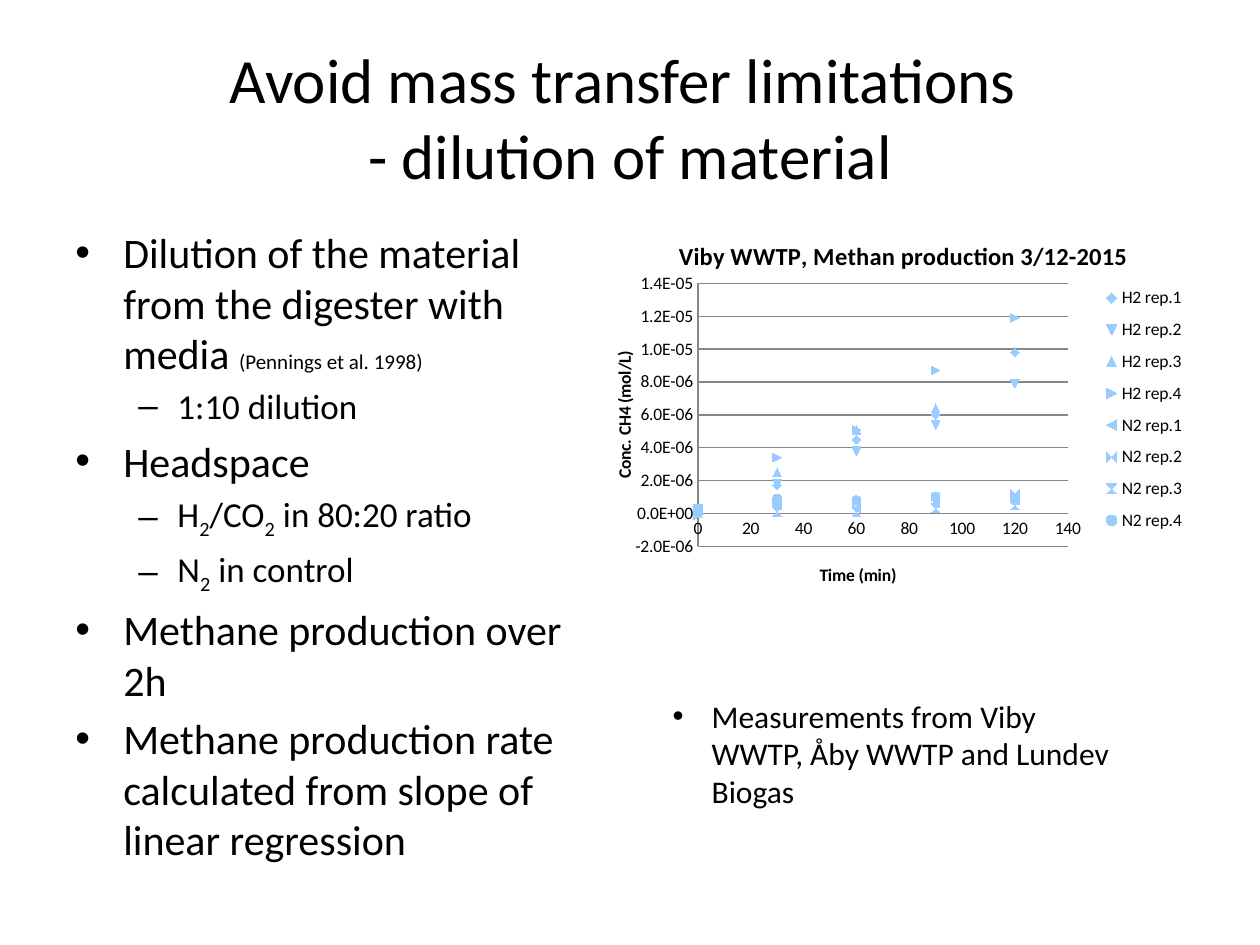
from lxml import etree
from pptx import Presentation
from pptx import util as u
from pptx.chart.data import XyChartData
from pptx.dml.color import RGBColor
from pptx.enum import chart as charts, text
from pptx.oxml import parse_xml
from pptx.oxml.ns import nsdecls, qn

FONT = "Calibri"
BLACK = RGBColor(0x00, 0x00, 0x00)
GRAY = RGBColor(0x87, 0x87, 0x87)
MARKER = RGBColor(0x99, 0xCC, 0xFF)

# Content
TITLE = "Avoid mass transfer limitations \v- dilution of material"
SUB = {"baseline": -25}
SMALL = {"size": 12}
BODY = [  # (style, runs)
    ("main", [("Dilution of the material from the digester with media ", {}),
              ("(Pennings et al. 1998)", SMALL)]),
    ("detail", [("1:10 dilution", {})]),
    ("main", [("Headspace", {})]),
    ("detail", [("H", {}), ("2", SUB), ("/CO", {}), ("2", SUB), (" in 80:20 ratio", {})]),
    ("detail", [("N", {}), ("2", SUB), (" in control", {})]),
    ("main", [("Methane production over 2h", {})]),
    ("main", [("Methane production rate calculated from slope of linear regression", {})]),
]
NOTE = [("note", [("Measurements from Viby WWTP, Åby WWTP and Lundev Biogas", {})])]
STYLES = {
    "main": {"level": 0, "size": 24, "left": 0.38, "hang": 0.38, "bullet": "•", "before": 0.2},
    "detail": {"level": 1, "size": 20, "left": 0.81, "hang": 0.31, "bullet": "–", "before": 0.2},
    "note": {"level": 0, "size": 18, "left": 0.31, "hang": 0.31, "bullet": "•", "before": 0},
}

CHART_TITLE = "Viby WWTP, Methan production 3/12-2015"
MINUTES = [0, 30, 60, 90, 120]
CONCENTRATIONS = {
    "H2 rep.1": [1e-07, 1.7e-06, 4.5e-06, 6e-06, 9.8e-06],
    "H2 rep.2": [3e-07, 1.8e-06, 3.8e-06, 5.4e-06, 7.9e-06],
    "H2 rep.3": [2e-07, 2.5e-06, 5.1e-06, 6.4e-06],
    "H2 rep.4": [-1e-07, 3.4e-06, 5.1e-06, 8.7e-06, 1.19e-05],
    "N2 rep.1": [3e-07, 5e-07, 3e-07, 6e-07, 8e-07],
    "N2 rep.2": [2e-07, 6e-07, 6e-07, 1e-06, 1.2e-06],
    "N2 rep.3": [0, 1e-07, 1e-07, 3e-07, 5e-07],
    "N2 rep.4": [2e-07, 9e-07, 8e-07, 1e-06, 8e-07],
}
AXES = {  # title, minimum, maximum, step, number format, gridlines
    "category_axis": ("Time (min)", 0, 140, 20, "General", False),
    "value_axis": ("Conc. CH4 (mol/L)", -2e-06, 1.4e-05, 2e-06, "0.0E+00", True),
}
PLOT_AREA = {"x": 0.15, "y": 0.17, "w": 0.63, "h": 0.71}
LEGEND_AREA = {"x": 0.83, "y": 0.15, "w": 0.16, "h": 0.72}


def box(*lengths):
    return [u.Inches(length) for length in lengths]


def set_font(font, size, bold=False):
    for name, value in {"name": FONT, "size": u.Pt(size), "bold": bold}.items():
        setattr(font, name, value)
    font.color.rgb = BLACK


def add_bullets(slide, place, content):
    frame = slide.shapes.add_textbox(*box(*place)).text_frame
    frame.word_wrap = True
    for index, (style_name, runs) in enumerate(content):
        style = STYLES[style_name]
        paragraph = frame.add_paragraph() if index else frame.paragraphs[0]
        paragraph.level = style["level"]
        paragraph.space_before = u.Pt(style["before"] * style["size"])
        properties = paragraph._p.get_or_add_pPr()
        properties.set("marL", str(u.Inches(style["left"])))
        properties.set("indent", str(-u.Inches(style["hang"])))
        etree.SubElement(properties, qn("a:buFont")).set("typeface", "Arial")
        etree.SubElement(properties, qn("a:buChar")).set("char", style["bullet"])
        for words, changes in runs:
            run = paragraph.add_run()
            run.text = words
            set_font(run.font, changes.get("size", style["size"]))
            if "baseline" in changes:
                run._r.get_or_add_rPr().set("baseline", str(changes["baseline"] * 1000))


def add_title_text(owner, words, size):
    frame = owner.text_frame
    frame.text = words
    set_font(frame.paragraphs[0].runs[0].font, size, bold=True)


def set_layout(element, position, area, target=""):
    for old in element.findall(qn("c:layout")):
        element.remove(old)
    sizes = "".join(f'<c:{key} val="{value}"/>' for key, value in area.items())
    element.insert(position, parse_xml(
        f'<c:layout {nsdecls("c")}><c:manualLayout>{target}'
        f'<c:xMode val="edge"/><c:yMode val="edge"/>{sizes}</c:manualLayout></c:layout>'))


def add_scatter(slide, place):
    data = XyChartData()
    for name, values in CONCENTRATIONS.items():
        series = data.add_series(name)
        for minute, value in zip(MINUTES, values):
            series.add_data_point(minute, value)
    chart = slide.shapes.add_chart(charts.XL_CHART_TYPE.XY_SCATTER, *box(*place), data).chart
    set_font(chart.font, 10)
    add_title_text(chart.chart_title, CHART_TITLE, 14)
    chart.chart_title.include_in_layout = False
    chart.has_legend = True
    chart.legend.position = charts.XL_LEGEND_POSITION.RIGHT
    chart.legend.include_in_layout = False

    # Axes
    for axis_name, (title, low, high, step, number_format, grid) in AXES.items():
        axis = getattr(chart, axis_name)
        settings = {"minimum_scale": low, "maximum_scale": high, "major_unit": step,
                    "has_major_gridlines": grid,
                    "major_tick_mark": charts.XL_TICK_MARK.NONE,
                    "minor_tick_mark": charts.XL_TICK_MARK.NONE}
        for name, value in settings.items():
            setattr(axis, name, value)
        axis.tick_labels.number_format = number_format
        axis.tick_labels.number_format_is_linked = False
        axis.format.line.color.rgb = GRAY
        if grid:
            axis.major_gridlines.format.line.color.rgb = GRAY
        add_title_text(axis.axis_title, title, 10)

    # Markers without joining lines; the N2 controls come first in plot order
    chart.plots[0].vary_by_categories = False
    all_series = list(chart.plots[0].series)
    count = len(all_series)
    for index, series in enumerate(all_series):
        order = (index + count // 2) % count
        series._element.find(qn("c:order")).set("val", str(order))
        series.format.line.fill.background()
        series.marker.style = charts.XL_MARKER_STYLE.AUTOMATIC
        series.marker.size = 5
        series.marker.format.fill.solid()
        series.marker.format.fill.fore_color.rgb = MARKER
        series.marker.format.line.color.rgb = MARKER

    # Plot and legend areas
    set_layout(chart._chartSpace.chart.plotArea, 0, PLOT_AREA, '<c:layoutTarget val="inner"/>')
    set_layout(chart.legend._element, 1, LEGEND_AREA)


def main():
    presentation = Presentation()
    presentation.slide_width, presentation.slide_height = box(10, 7.5)
    slide = presentation.slides.add_slide(presentation.slide_layouts[5])

    # Title
    title = slide.shapes.title
    title.left, title.top, title.width, title.height = box(0.5, 0.3, 9, 1.25)
    title.text_frame.text = TITLE
    title.text_frame.vertical_anchor = text.MSO_ANCHOR.MIDDLE
    paragraph = title.text_frame.paragraphs[0]
    paragraph.alignment = text.PP_ALIGN.CENTER
    for run in paragraph.runs:
        set_font(run.font, 36)

    # Method, measurements and remark
    add_bullets(slide, (0.5, 1.75, 4.42, 4.95), BODY)
    add_scatter(slide, (4.84, 1.75, 4.66, 2.94))
    add_bullets(slide, (5.24, 5.48, 3.7, 1.01), NOTE)
    presentation.save("out.pptx")


if __name__ == "__main__":
    main()
